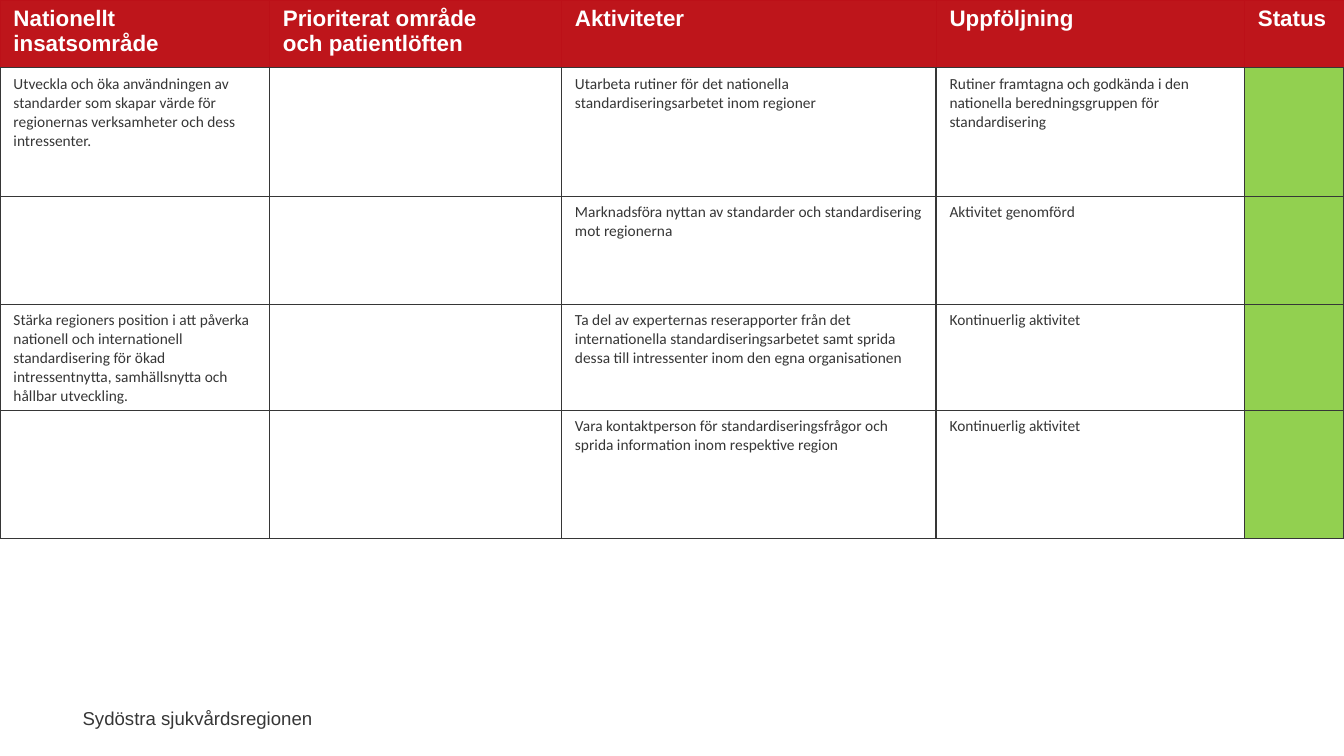
import dataclasses
import typing

import lxml.etree
import pptx
import pptx.dml.color
import pptx.enum.text
import pptx.oxml.ns
import pptx.util

Cm = pptx.util.Cm
Pt = pptx.util.Pt


@dataclasses.dataclass(frozen=True)
class Theme:
    red: str = "BE151B"
    edge: str = "BC1018"
    dark: str = "363636"
    green: str = "92D050"
    white: str = "FFFFFF"
    head_font: str = "Arial"
    body_font: str = "Calibri"
    head_size: float = 16
    body_size: float = 11
    foot_size: float = 13.3


@dataclasses.dataclass(frozen=True)
class Style:
    font: str
    size: float
    color: str
    bold: bool = False


@dataclasses.dataclass(frozen=True)
class Column:
    title: str
    width: float


@dataclasses.dataclass(frozen=True)
class Task:
    height: float
    area: str
    action: str
    result: str


THEME = Theme()
HEAD = Style(THEME.head_font, THEME.head_size, THEME.white, True)
BODY = Style(THEME.body_font, THEME.body_size, THEME.dark)
FOOT = Style(THEME.head_font, THEME.foot_size, THEME.dark)
HEAD_HEIGHT = 1.7

COLUMNS = [
    Column("Nationellt insatsområde", 6.79),
    Column("Prioriterat område\noch patientlöften", 7.36),
    Column("Aktiviteter", 9.44),
    Column("Uppföljning", 7.77),
    Column("Status", 2.51),
]

TASKS = [
    Task(
        3.25,
        "Utveckla och öka användningen av standarder som skapar värde för "
        "regionernas verksamheter och dess intressenter.",
        "Utarbeta rutiner för det nationella standardiseringsarbetet inom regioner",
        "Rutiner framtagna och godkända i den nationella beredningsgruppen "
        "för standardisering",
    ),
    Task(
        2.72,
        "",
        "Marknadsföra nyttan av standarder och standardisering mot regionerna",
        "Aktivitet genomförd",
    ),
    Task(
        2.66,
        "Stärka regioners position i att påverka nationell och internationell "
        "standardisering för ökad intressentnytta, samhällsnytta och hållbar "
        "utveckling.",
        "Ta del av experternas reserapporter från det internationella "
        "standardiseringsarbetet samt sprida dessa till intressenter inom den "
        "egna organisationen",
        "Kontinuerlig aktivitet",
    ),
    Task(
        3.23,
        "",
        "Vara kontaktperson för standardiseringsfrågor och sprida information "
        "inom respektive region",
        "Kontinuerlig aktivitet",
    ),
]


def rgb(color: str) -> pptx.dml.color.RGBColor:
    return pptx.dml.color.RGBColor.from_string(color)


def write(par: typing.Any, text: str, style: Style) -> None:
    """Add the text as styled runs, with a line break at each newline."""
    for i, line in enumerate(text.split("\n")):
        if i:
            par.add_line_break()
        run = par.add_run()
        run.text = line
        run.font.name = style.font
        run.font.size = Pt(style.size)
        run.font.bold = style.bold
        run.font.color.rgb = rgb(style.color)


def edge(cell: typing.Any, sides: str, color: str, width: float) -> None:
    """Draw cell borders; sides holds letters in the order L, R, T, B."""
    qn = pptx.oxml.ns.qn
    props = cell._tc.get_or_add_tcPr()
    for side in sides:
        line = lxml.etree.Element(qn("a:ln" + side), w=str(Pt(width)))
        fill = lxml.etree.SubElement(line, qn("a:solidFill"))
        lxml.etree.SubElement(fill, qn("a:srgbClr"), val=color)
        spot = sum(child.tag.startswith(qn("a:ln")) for child in props)
        props.insert(spot, line)


def fill_cell(cell: typing.Any, text: str, style: Style, color: str) -> None:
    cell.margin_left = cell.margin_right = Cm(0.34)
    cell.margin_top = cell.margin_bottom = Cm(0.17)
    cell.fill.solid()
    cell.fill.fore_color.rgb = rgb(color)
    if text:
        write(cell.text_frame.paragraphs[0], text, style)


def add_plan(slide: typing.Any) -> None:
    heights = [HEAD_HEIGHT] + [task.height for task in TASKS]
    width = sum(col.width for col in COLUMNS)
    frame = slide.shapes.add_table(
        len(heights), len(COLUMNS), 0, 0, Cm(width), Cm(sum(heights))
    )
    table = frame.table
    table.horz_banding = False
    for row, height in zip(table.rows, heights):
        row.height = Cm(height)
    for i, col in enumerate(COLUMNS):
        table.columns[i].width = Cm(col.width)
        cell = table.cell(0, i)
        fill_cell(cell, col.title, HEAD, THEME.red)
        edge(cell, "LRT", THEME.edge, 0.75)
        edge(cell, "B", THEME.dark, 1)
    for r, task in enumerate(TASKS, 1):
        texts = [task.area, "", task.action, task.result, ""]
        for c, text in enumerate(texts):
            last = c == len(texts) - 1
            cell = table.cell(r, c)
            fill_cell(cell, text, BODY, THEME.green if last else THEME.white)
            edge(cell, "LRTB", THEME.dark, 1)


def add_foot(slide: typing.Any) -> None:
    box = slide.shapes.add_textbox(Cm(1.78), Cm(17.68), Cm(6.35), Cm(0.84))
    frame = box.text_frame
    frame.word_wrap = False
    frame.auto_size = pptx.enum.text.MSO_AUTO_SIZE.SHAPE_TO_FIT_TEXT
    par = frame.paragraphs[0]
    par.alignment = pptx.enum.text.PP_ALIGN.RIGHT
    write(par, "Sydöstra sjukvårdsregionen", FOOT)


def main() -> None:
    deck = pptx.Presentation()
    deck.slide_width = Cm(33.87)
    deck.slide_height = Cm(19.05)
    slide = deck.slides.add_slide(deck.slide_layouts[6])
    add_foot(slide)
    add_plan(slide)
    deck.save("out.pptx")


if __name__ == "__main__":
    main()
